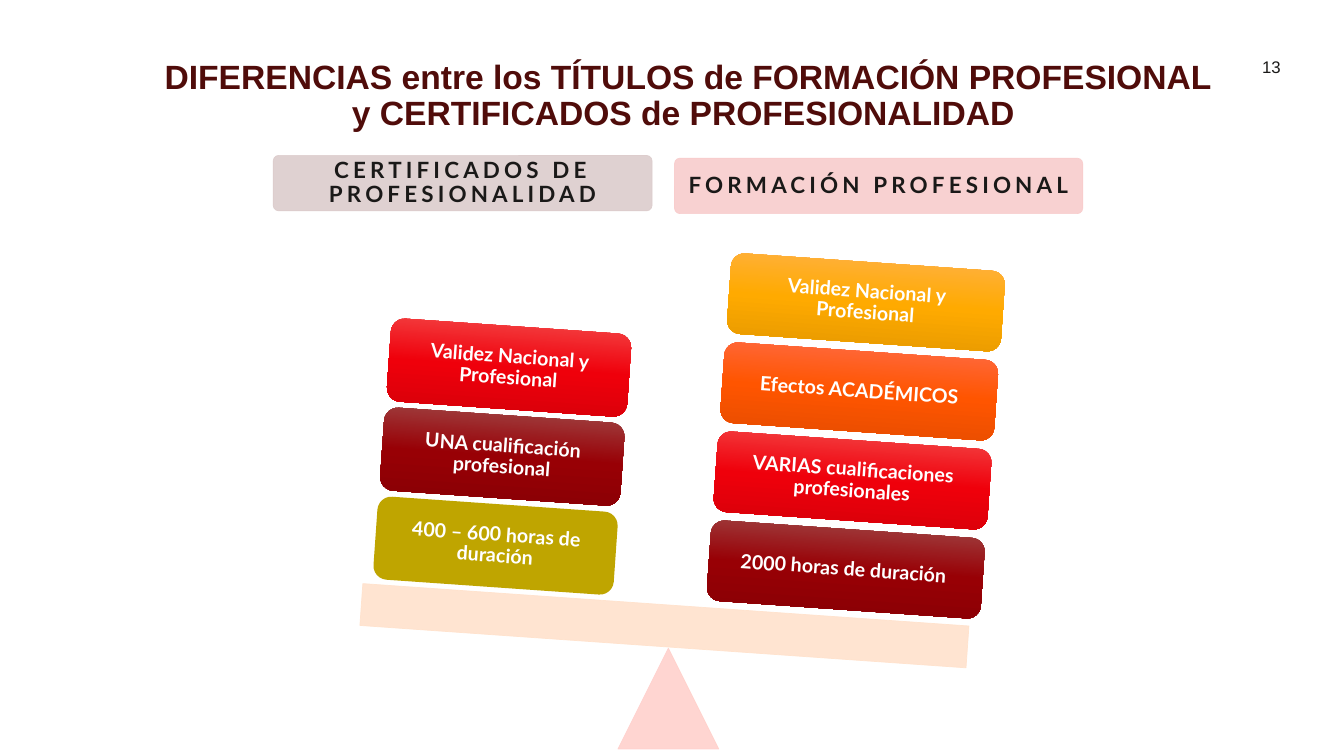
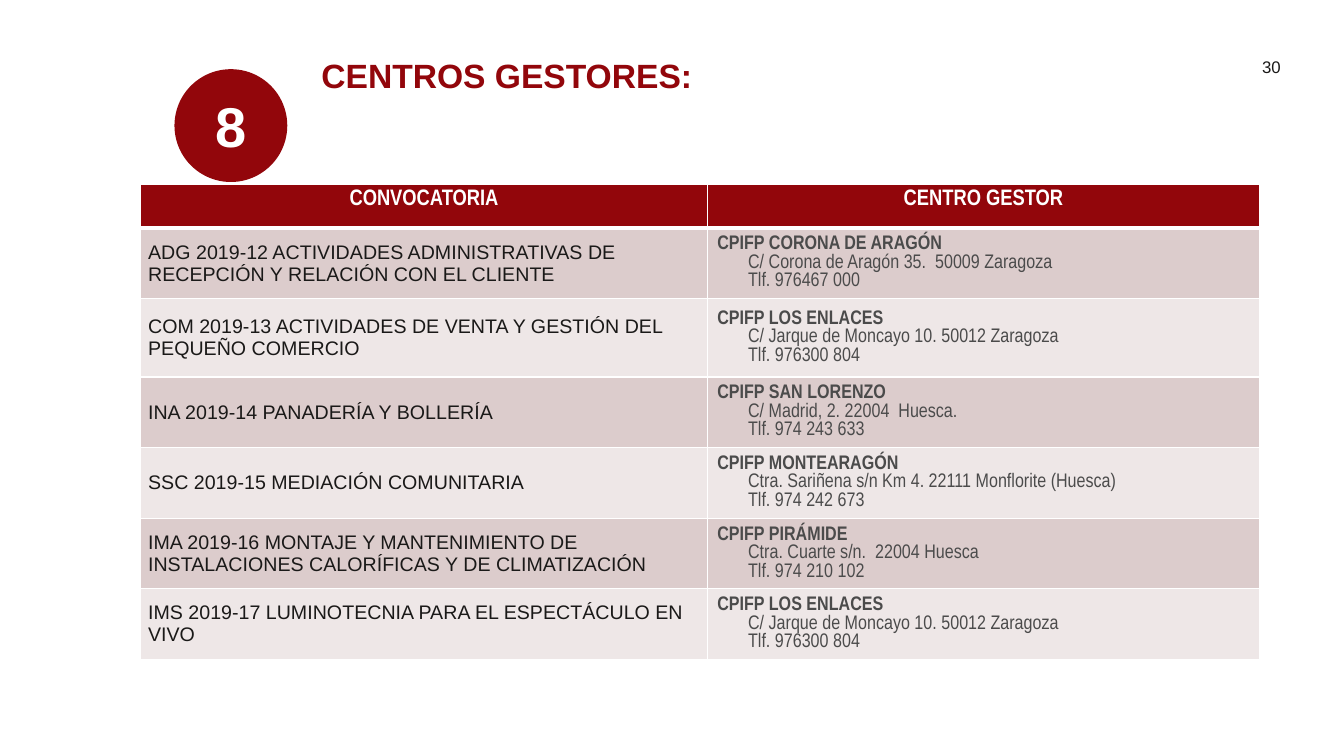
from dataclasses import dataclass

from lxml import etree
from pptx import Presentation
from pptx.dml.color import RGBColor
from pptx.enum.shapes import MSO_SHAPE
from pptx.enum.text import MSO_ANCHOR, PP_ALIGN
from pptx.oxml.ns import qn
from pptx.util import Pt

LEFT, CENTER = PP_ALIGN.LEFT, PP_ALIGN.CENTER
TOP, MIDDLE = MSO_ANCHOR.TOP, MSO_ANCHOR.MIDDLE
RECTANGLE, ROUNDED = MSO_SHAPE.RECTANGLE, MSO_SHAPE.ROUNDED_RECTANGLE
TRIANGLE, OVAL = MSO_SHAPE.ISOSCELES_TRIANGLE, MSO_SHAPE.OVAL


@dataclass(frozen=True)
class Theme:
    # Fonts
    body: str = "Arial"
    narrow: str = "Arial Narrow"
    diagram: str = "Lato"
    # Colours
    ink: str = "1A1918"
    grey: str = "4B4B4B"
    white: str = "FFFFFF"
    maroon: str = "92060B"
    dark_title: str = "500C0A"
    band_dark: str = "DCCCCC"
    band_light: str = "EEE7E7"
    pink: str = "F8CCCC"
    fulcrum: str = "FFD1CC"
    beam: str = "FFE2CC"
    # Block fills, from top to bottom
    olive: tuple = ("BFA500",)
    wine: tuple = ("A04B4B", "980005", "870005")
    red: tuple = ("F44B4B", "EF000B", "D4000A")
    orange: tuple = ("FF6D4B", "FF5500", "E34C00")
    amber: tuple = ("FFB24B", "FFAA00", "E39700")
    # Type sizes
    badge_size: int = 40
    title_size: int = 24
    heading_size: int = 16
    text_size: int = 14
    page_size: int = 12


THEME = Theme()
TILT = 4
BLOCK_STEP_X, BLOCK_STEP_Y = 4.8, 63.6

LEFT_BLOCKS = [
    ("400 – 600 horas de duración", THEME.olive),
    ("UNA cualificación profesional", THEME.wine),
    ("Validez Nacional y Profesional", THEME.red),
]
RIGHT_BLOCKS = [
    ("2000 horas de duración ", THEME.wine),
    ("VARIAS cualificaciones profesionales", THEME.red),
    ("Efectos ACADÉMICOS", THEME.orange),
    ("Validez Nacional y Profesional", THEME.amber),
]

ENLACES = ("CPIFP LOS ENLACES", "C/ Jarque de Moncayo 10. 50012 Zaragoza", "Tlf. 976300 804")
CENTRES = [
    ("ADG 2019-12 ACTIVIDADES ADMINISTRATIVAS DE RECEPCIÓN Y RELACIÓN CON EL CLIENTE",
     ("CPIFP CORONA DE ARAGÓN", "C/ Corona de Aragón 35.  50009 Zaragoza", "Tlf. 976467 000")),
    ("COM 2019-13 ACTIVIDADES DE VENTA Y GESTIÓN DEL PEQUEÑO COMERCIO", ENLACES),
    ("INA 2019-14 PANADERÍA Y BOLLERÍA",
     ("CPIFP SAN LORENZO", "C/ Madrid, 2. 22004  Huesca.", "Tlf. 974 243 633")),
    ("SSC 2019-15 MEDIACIÓN COMUNITARIA",
     ("CPIFP MONTEARAGÓN", "Ctra. Sariñena s/n Km 4. 22111 Monflorite (Huesca)",
      "Tlf. 974 242 673")),
    ("IMA 2019-16 MONTAJE Y MANTENIMIENTO DE INSTALACIONES CALORÍFICAS Y DE CLIMATIZACIÓN",
     ("CPIFP PIRÁMIDE", "Ctra. Cuarte s/n.  22004 Huesca", "Tlf. 974 210 102")),
    ("IMS 2019-17 LUMINOTECNIA PARA EL ESPECTÁCULO EN VIVO", ENLACES),
]
COLUMN_WIDTHS = (404.6, 394.6)
ROW_HEIGHTS = (31, 48, 56) + (50.4,) * 4


def rgb(color):
    return RGBColor.from_string(color)


# Text
def style(paragraph, size, color, font=THEME.body, bold=False, align=LEFT):
    paragraph.alignment = align
    for run in paragraph.runs:
        run.font.size = Pt(size)
        run.font.name = font
        run.font.bold = bold
        run.font.color.rgb = rgb(color)
    # The paragraph mark takes the run size, so that row heights fit the text
    mark = etree.SubElement(paragraph._p, qn("a:endParaRPr"), sz=str(size * 100))
    etree.SubElement(mark, qn("a:latin"), typeface=font)


def set_margins(target, horizontal, vertical):
    target.margin_left = target.margin_right = Pt(horizontal)
    target.margin_top = target.margin_bottom = Pt(vertical)


def fill_frame(text_frame, text, margins, anchor=MIDDLE):
    text_frame.word_wrap = True
    text_frame.vertical_anchor = anchor
    set_margins(text_frame, *margins)
    text_frame.text = text
    return text_frame.paragraphs[0]


def add_text(slide, box, text, margins, anchor=TOP):
    textbox = slide.shapes.add_textbox(*map(Pt, box))
    return fill_frame(textbox.text_frame, text, margins, anchor)


def add_title(slide, box, text, margins, color, line_spacing, align=LEFT):
    paragraph = add_text(slide, box, text, margins)
    paragraph.line_spacing = line_spacing
    style(paragraph, THEME.title_size, color, bold=True, align=align)


def add_page_number(slide, number):
    paragraph = add_text(slide, (897, 39.5, 22.5, 16), number, (0, 0), MIDDLE)
    style(paragraph, THEME.page_size, THEME.ink, align=CENTER)


# Shapes
def paint(fill, colors):
    if len(colors) == 1:
        fill.solid()
        fill.fore_color.rgb = rgb(colors[0])
    else:
        fill.gradient()
        fill.gradient_angle = 270


def set_stops(shape, colors):
    stop_list = shape._element.spPr.find(".//" + qn("a:gsLst"))
    for stop in list(stop_list):
        stop_list.remove(stop)
    for index, color in enumerate(colors):
        position = 100000 * index // (len(colors) - 1)
        stop = etree.SubElement(stop_list, qn("a:gs"), pos=str(position))
        etree.SubElement(stop, qn("a:srgbClr"), val=color)


def add_shape(slide, kind, box, colors, rotation=0):
    shape = slide.shapes.add_shape(kind, *map(Pt, box))
    shape.shadow.inherit = False
    shape.rotation = rotation
    shape.line.fill.background()
    paint(shape.fill, colors)
    if len(colors) > 1:
        set_stops(shape, colors)
    return shape


def add_soft_shape(slide, kind, box, color, rotation=0):
    """Slightly transparent shape with a thin line of its own colour."""
    shape = add_shape(slide, kind, box, (color,), rotation)
    shape.line.color.rgb = rgb(color)
    shape.line.width = Pt(0.5)
    for element in shape._element.spPr.iter(qn("a:srgbClr")):
        etree.SubElement(element, qn("a:alpha"), val="90000")
    return shape


def add_heading(slide, box, text, color):
    shape = add_soft_shape(slide, ROUNDED, box, color)
    shape.adjustments[0] = 0.1
    paragraph = fill_frame(shape.text_frame, text, (5, 5))
    paragraph.line_spacing = 0.9
    style(paragraph, THEME.heading_size, THEME.ink, THEME.diagram, True, CENTER)
    for run in paragraph.runs:
        run.font._element.set("spc", "300")


def add_tower(slide, center, size, blocks):
    """Stack tilted blocks upwards from the center of the lowest one."""
    width, height = size
    for level, (text, colors) in enumerate(blocks):
        left = center[0] + level * BLOCK_STEP_X - width / 2
        top = center[1] - level * BLOCK_STEP_Y - height / 2
        shape = add_shape(slide, ROUNDED, (left, top, width, height), colors, TILT)
        paragraph = fill_frame(shape.text_frame, text, (4.2, 4.2))
        paragraph.line_spacing = 0.9
        style(paragraph, THEME.text_size, THEME.white, THEME.diagram, True, CENTER)


# Table
def finish_cell(cell, color, top=1, bottom=1):
    properties = cell._tc.get_or_add_tcPr()
    for side, width in (("L", 1), ("R", 1), ("T", top), ("B", bottom)):
        line = etree.SubElement(properties, qn("a:ln" + side), w=str(Pt(width)))
        solid = etree.SubElement(line, qn("a:solidFill"))
        etree.SubElement(solid, qn("a:srgbClr"), val=THEME.white)
    cell.fill.solid()
    cell.fill.fore_color.rgb = rgb(color)


def fill_header(cell, text):
    set_margins(cell, 7.2, 3.6)
    cell.text_frame.text = text
    style(cell.text_frame.paragraphs[0], THEME.heading_size, THEME.white,
          THEME.narrow, True, CENTER)
    finish_cell(cell, THEME.maroon, bottom=3)


def fill_call(cell, text):
    set_margins(cell, 5.2, 0)
    cell.vertical_anchor = MIDDLE
    cell.text_frame.text = text
    style(cell.text_frame.paragraphs[0], THEME.text_size, THEME.ink)


def fill_centre(cell, lines):
    set_margins(cell, 7.2, 0)
    cell.vertical_anchor = MIDDLE
    cell.text_frame.text = "\n".join(lines)
    for index, paragraph in enumerate(cell.text_frame.paragraphs):
        if index:
            properties = paragraph._p.get_or_add_pPr()
            properties.set("marL", str(Pt(22)))
            properties.set("indent", "0")
        style(paragraph, THEME.text_size, THEME.grey, THEME.narrow, bold=index == 0)


def add_centre_table(slide, left, top):
    frame = slide.shapes.add_table(len(ROW_HEIGHTS), len(COLUMN_WIDTHS), Pt(left), Pt(top),
                                   Pt(sum(COLUMN_WIDTHS)), Pt(sum(ROW_HEIGHTS)))
    table = frame.table
    for column, width in zip(table.columns, COLUMN_WIDTHS):
        column.width = Pt(width)
    for row, height in zip(table.rows, ROW_HEIGHTS):
        row.height = Pt(height)
    for column, text in enumerate(("CONVOCATORIA", "CENTRO GESTOR")):
        fill_header(table.cell(0, column), text)
    for row, (call, centre) in enumerate(CENTRES, start=1):
        fill_call(table.cell(row, 0), call)
        fill_centre(table.cell(row, 1), centre)
        band = THEME.band_dark if row % 2 else THEME.band_light
        for cell in table.rows[row].cells:
            finish_cell(cell, band, top=3 if row == 1 else 1)


# Slides
def build_differences(slide):
    add_page_number(slide, "13")
    add_heading(slide, (195.2, 111, 270.6, 39.6), "CERTIFICADOS DE PROFESIONALIDAD",
                THEME.band_dark)
    add_heading(slide, (481.8, 113, 291.6, 39.6), "FORMACIÓN PROFESIONAL", THEME.pink)
    # Balance
    add_soft_shape(slide, TRIANGLE, (441.4, 463, 72, 72), THEME.fulcrum)
    add_soft_shape(slide, RECTANGLE, (257.6, 432, 434, 30), THEME.beam, TILT)
    add_tower(slide, (604.2, 406.8), (196, 57.6), RIGHT_BLOCKS)
    add_tower(slide, (354, 389.8), (172, 59.4), LEFT_BLOCKS)
    add_title(slide, (108.7, 39.6, 765.4, 57.6),
              "DIFERENCIAS entre los TÍTULOS de FORMACIÓN PROFESIONAL "
              "y CERTIFICADOS de PROFESIONALIDAD ",
              (0, 3.6), THEME.dark_title, 0.9, CENTER)


def build_centres(slide):
    add_page_number(slide, "30")
    badge = add_shape(slide, OVAL, (124.6, 49.4, 80.6, 80.6), (THEME.maroon,))
    number = fill_frame(badge.text_frame, "8", (0, 0))
    style(number, THEME.badge_size, THEME.white, bold=True, align=CENTER)
    add_title(slide, (222.5, 46.8, 555, 76), "CENTROS GESTORES:",
              (7.2, 3.6), THEME.maroon, Pt(17.8))
    add_centre_table(slide, 100.6, 131.8)


def main():
    presentation = Presentation()
    presentation.slide_width, presentation.slide_height = Pt(960), Pt(540)
    blank = presentation.slide_layouts[6]
    for build in (build_differences, build_centres):
        build(presentation.slides.add_slide(blank))
    presentation.save("out.pptx")


if __name__ == "__main__":
    main()
